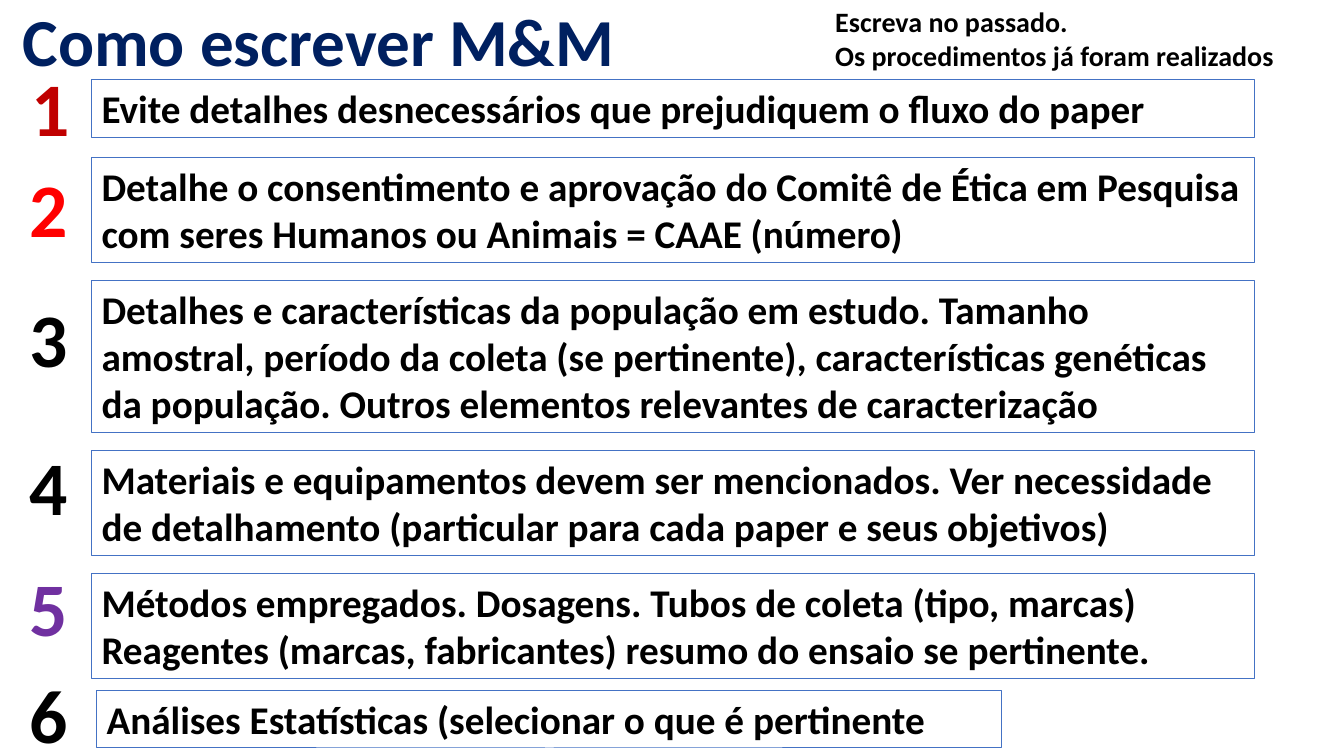
from dataclasses import dataclass

from pptx import Presentation
from pptx.dml.color import RGBColor
from pptx.enum import shapes, text
from pptx.util import Cm, Pt

FONT = "Calibri"
COLORS = {
    "navy": "002060",
    "black": "000000",
    "blue": "4472C4",
    "crimson": "C00000",
    "red": "FF0000",
    "purple": "7030A0",
}
LINE = 1.2  # height of one line of box text, in cm
PAD = 0.25  # top and bottom insets together, in cm


@dataclass
class Step:
    """One numbered box; lengths are in cm."""
    words: str
    lines: int
    top: float
    mark: float
    color: str = "black"
    left: float = 2.31
    width: float = 29.31
    mark_left: float = 0.48


STEPS = [
    Step("Evite detalhes desnecessários que prejudiquem o fluxo do paper",
         1, 2.01, 1.4, "crimson", mark_left=0.53),
    Step("Detalhe o consentimento e aprovação do Comitê de Ética em Pesquisa "
         "com seres Humanos ou Animais = CAAE (número)",
         2, 3.96, 3.96, "red"),
    Step("Detalhes e características da população em estudo. Tamanho amostral, "
         "período da coleta (se pertinente), características genéticas da "
         "população. Outros elementos relevantes de caracterização",
         3, 7.06, 7.24),
    Step("Materiais e equipamentos devem ser mencionados. Ver necessidade de "
         "detalhamento (particular para cada paper e seus objetivos)",
         2, 11.35, 10.97),
    Step("Métodos empregados. Dosagens. Tubos de coleta (tipo, marcas) "
         "Reagentes (marcas, fabricantes) resumo do ensaio se pertinente.",
         2, 14.45, 14, "purple"),
    Step("Análises Estatísticas (selecionar o que é pertinente",
         1, 17.4, 16.71, left=2.44, width=22.81),
]


def write(shape, words: str, size: int, color: str = "black",
          center: bool = False, wrap: bool = True) -> None:
    frame = shape.text_frame
    frame.text = words
    frame.word_wrap = wrap
    frame.auto_size = text.MSO_AUTO_SIZE.SHAPE_TO_FIT_TEXT
    for par in frame.paragraphs:
        par.alignment = text.PP_ALIGN.CENTER if center else text.PP_ALIGN.LEFT
        for run in par.runs:
            run.font.name = FONT
            run.font.size = Pt(size)
            run.font.bold = True
            run.font.color.rgb = RGBColor.from_string(COLORS[color])


def add_label(slide, left: float, top: float, width: float, height: float):
    return slide.shapes.add_textbox(Cm(left), Cm(top), Cm(width), Cm(height))


def add_step(slide, num: int, step: Step) -> None:
    box = slide.shapes.add_shape(
        shapes.MSO_SHAPE.RECTANGLE, Cm(step.left), Cm(step.top),
        Cm(step.width), Cm(PAD + LINE * step.lines))
    box.shadow.inherit = False
    box.fill.background()
    box.line.color.rgb = RGBColor.from_string(COLORS["blue"])
    box.line.width = Pt(0.75)
    box.text_frame.vertical_anchor = text.MSO_ANCHOR.TOP
    write(box, step.words, 28)

    mark = add_label(slide, step.mark_left, step.mark, 1.5, 2.57)
    write(mark, str(num), 54, step.color, center=True, wrap=False)


def main() -> None:
    deck = Presentation()
    deck.slide_width, deck.slide_height = Cm(33.87), Cm(19.05)
    slide = deck.slides.add_slide(deck.slide_layouts[6])

    title = add_label(slide, 0.23, -0.13, 15.98, 2.31)
    write(title, "Como escrever M&M ", 48, "navy", center=True, wrap=False)
    note = add_label(slide, 20.8, 0, 13.06, 1.96)
    write(note, "Escreva no passado.\nOs procedimentos já foram realizados", 20)

    for num, step in enumerate(STEPS, 1):
        add_step(slide, num, step)
    deck.save("out.pptx")


if __name__ == "__main__":
    main()
